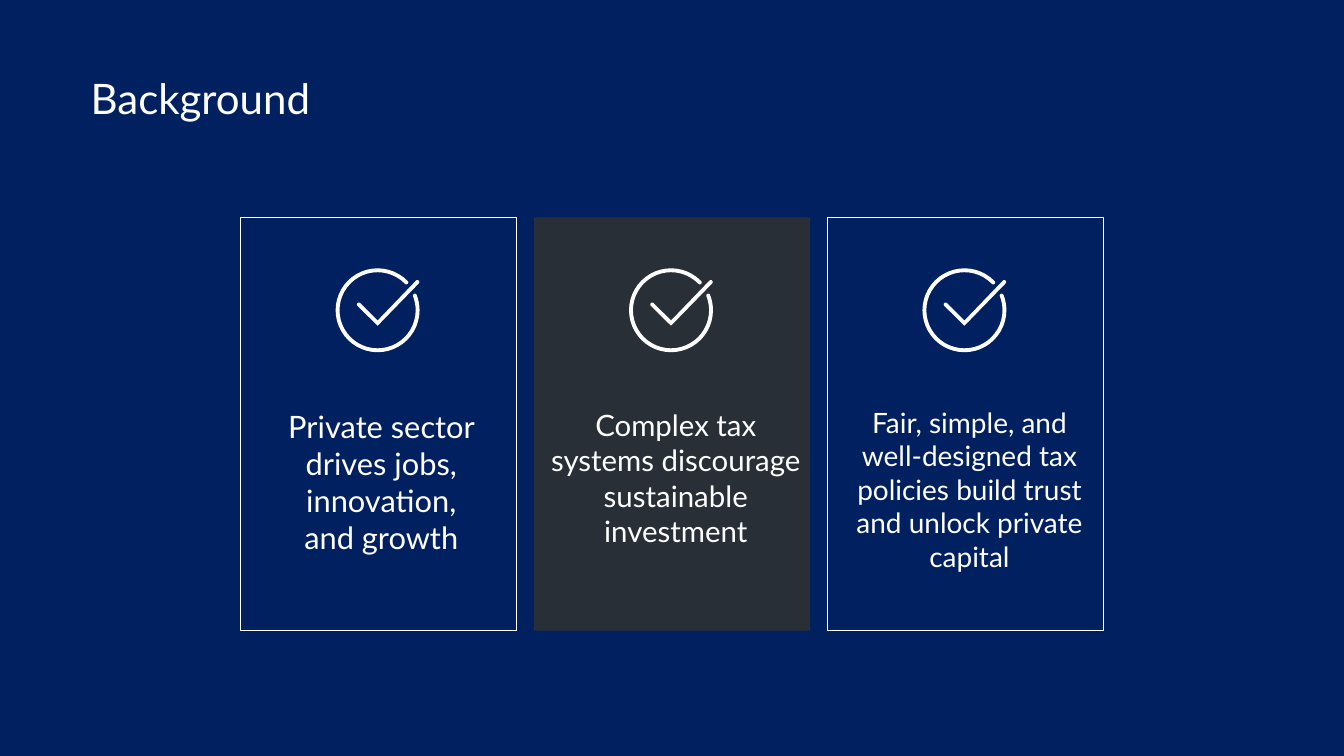
from math import cos, radians, sin

from lxml.etree import SubElement
from pptx import Presentation
from pptx.dml.color import RGBColor
from pptx.enum.shapes import MSO_SHAPE as Shape
from pptx.enum.text import MSO_AUTO_SIZE as AutoSize, PP_ALIGN as Align
from pptx.oxml.ns import qn
from pptx.util import Pt

PX = 9525  # EMU in one px, 96 px to the inch
COLORS = {"navy": "002060", "slate": "292F37", "white": "FFFFFF"}
FONT = "Lato"

# Card fill, text, text size, text box relative to the card
CARDS = [
    (None, "Private sector drives jobs, innovation, and growth", 44, (62, 358, 412, 294)),
    ("slate", "Complex tax systems discourage sustainable investment", 42, (7, 357, 526, 281)),
    (None, "Fair, simple, and well-designed tax policies build trust and unlock private capital",
     40, (16, 353, 509, 333)),
]


def rgb(name):
    return RGBColor.from_string(COLORS[name])


def emu(*lengths):
    return [round(v * PX) for v in lengths]


def add_text(s, box, text, size, align=Align.LEFT, wrap=True):
    tf = s.shapes.add_textbox(*emu(*box)).text_frame
    tf.word_wrap = wrap
    tf.auto_size = AutoSize.SHAPE_TO_FIT_TEXT
    p = tf.paragraphs[0]
    p.alignment = align
    r = p.add_run()
    r.text = text
    r.font.name, r.font.size = FONT, Pt(size)
    r.font.color.rgb = rgb("white")


def polar(cx, cy, radius, angle):
    return cx + radius * cos(radians(angle)), cy + radius * sin(radians(angle))


def check_icon_steps(c=800, outer=799, inner=725, cap=37):
    """Outline steps of an open ring and a tick, in tenths of a px."""
    start, end = 338.5, 316
    sweep = end - start + 360
    short_end, corner, long_end = (c - 358, c - 110), 247, (c + 758, c - 538)
    return [
        # Ring: outer arc, round end, inner arc, round end
        ("moveTo", polar(c, c, outer, start)),
        ("arcTo", (outer, start, sweep)),
        ("arcTo", (cap, end, 180)),
        ("arcTo", (inner, end, -sweep)),
        ("arcTo", (cap, start - 180, 180)),
        ("close", ()),
        # Tick: long arm, round end, short arm, round end
        ("moveTo", (c, c + corner - 52)),
        ("lnTo", polar(*long_end, cap, 224)),
        ("arcTo", (cap, 224, 180)),
        ("lnTo", (c, c + corner + 48)),
        ("lnTo", polar(*short_end, cap, 135)),
        ("arcTo", (cap, 135, 180)),
        ("close", ()),
    ]


def add_check_icon(s, x, y, size=160):
    side = size * 10
    builder = s.shapes.build_freeform(0, 0, scale=PX / 10)
    builder.add_line_segments([(side, 0), (side, side), (0, side)])
    sp = builder.convert_to_shape(*emu(x, y))
    # Give the outline true arcs
    outline = next(sp.element.iter(qn("a:path")))
    for child in list(outline):
        outline.remove(child)
    for kind, values in check_icon_steps(side // 2):
        step = SubElement(outline, qn("a:" + kind))
        if kind == "arcTo":
            radius, start, sweep = values
            for key, value in (("wR", radius), ("hR", radius),
                               ("stAng", start * 60000), ("swAng", sweep * 60000)):
                step.set(key, str(round(value)))
        elif values:
            pt = SubElement(step, qn("a:pt"))
            for key, value in zip("xy", values):
                pt.set(key, str(round(value)))
    sp.shadow.inherit = False
    sp.fill.solid()
    sp.fill.fore_color.rgb = rgb("white")
    sp.line.fill.background()


def add_panel(s, box, fill):
    sp = s.shapes.add_shape(Shape.RECTANGLE, *emu(*box))
    sp.shadow.inherit = False
    if fill:
        sp.fill.solid()
        sp.fill.fore_color.rgb = rgb(fill)
        sp.line.fill.background()
    else:
        sp.fill.background()
        sp.line.color.rgb = rgb("white")
        sp.line.width = Pt(1)


def add_card(s, box, fill, text, size, text_box):
    x, y, w, h = box
    add_panel(s, box, fill)
    add_check_icon(s, x + 181, y + 97)
    dx, dy, tw, th = text_box
    add_text(s, (x + dx, y + dy, tw, th), text, size, Align.CENTER)


def add_cards(s, box, gap):
    x, y, w, h = box
    card_w = (w - gap * (len(CARDS) - 1)) / len(CARDS)
    for i, card in enumerate(CARDS):
        add_card(s, (x + i * (card_w + gap), y, card_w, h), *card)


def main():
    prs = Presentation()
    prs.slide_width, prs.slide_height = emu(2559, 1440)
    s = prs.slides.add_slide(prs.slide_layouts[6])
    s.background.fill.solid()
    s.background.fill.fore_color.rgb = rgb("navy")
    add_text(s, (163, 133, 459, 107), "Background", 60, wrap=False)
    add_cards(s, (458, 414, 1643, 787), gap=33)
    prs.save("out.pptx")


if __name__ == "__main__":
    main()
